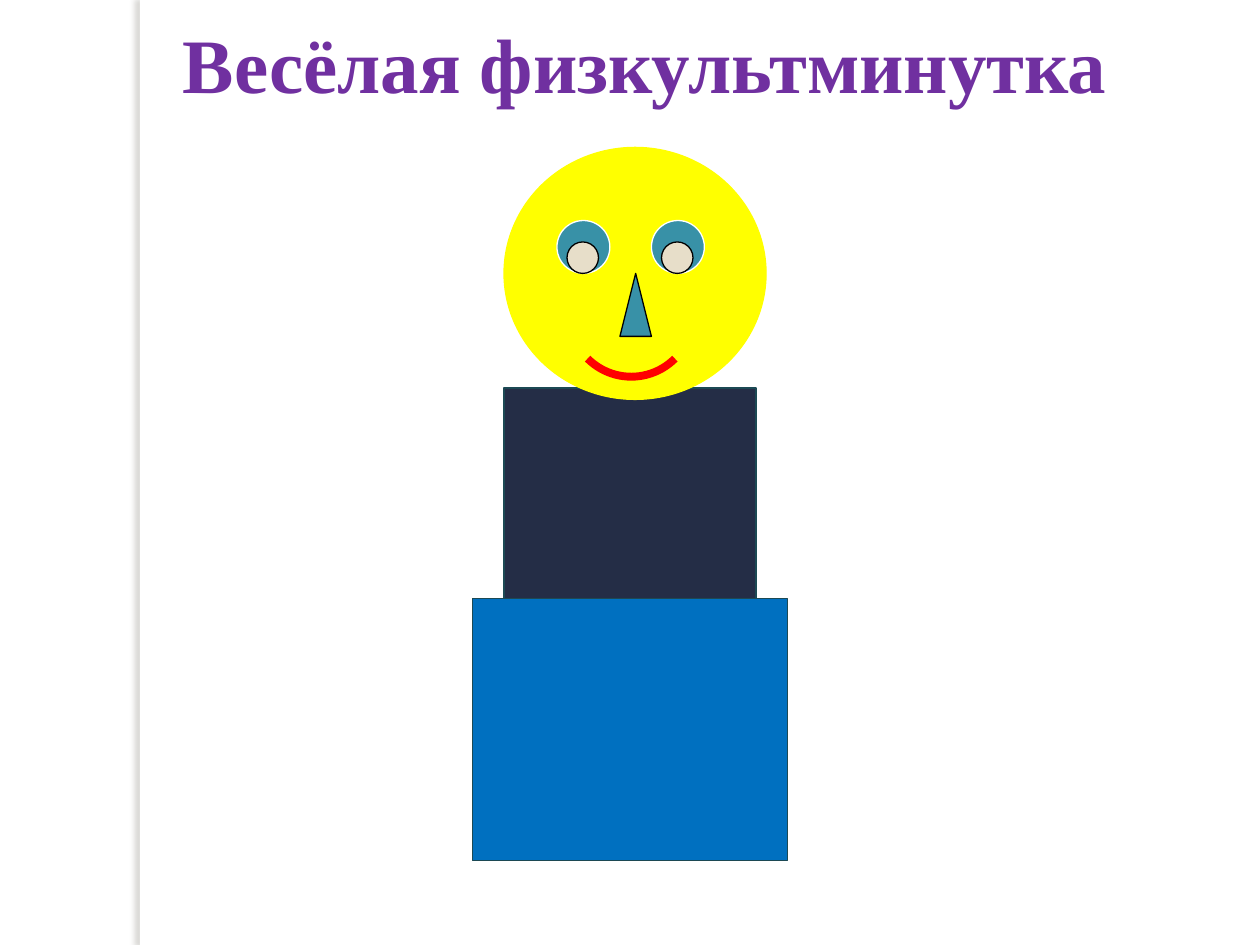
from lxml.etree import SubElement
from pptx import Presentation
from pptx.dml.color import RGBColor
from pptx.enum.shapes import MSO_SHAPE
from pptx.enum.text import MSO_ANCHOR, PP_ALIGN
from pptx.oxml.ns import qn
from pptx.util import Inches, Pt


def paint(color, value):
    color.rgb = RGBColor.from_string(value)


class Board:
    """Holds the style and the current slide."""
    font = "Times New Roman"
    edge = "1C4954"
    teal = "3891A7"
    black = "000000"

    def __init__(self, deck):
        self.slide = deck.slides.add_slide(deck.slide_layouts[5])

    def title(self, text, left, top, width, height):
        box = self.slide.shapes.title
        box.left, box.top = Inches(left), Inches(top)
        box.width, box.height = Inches(width), Inches(height)
        frame = box.text_frame
        frame.text = text
        frame.word_wrap = True
        frame.vertical_anchor = MSO_ANCHOR.TOP
        frame.margin_top = Inches(0.13)
        frame.margin_bottom = 0
        para = frame.paragraphs[0]
        para.alignment = PP_ALIGN.CENTER
        para.space_before = Pt(0)
        para.font.name, para.font.size, para.font.bold = self.font, Pt(44), True
        paint(para.font.color, "7030A0")

    def shape(self, kind, left, top, width, height, fill=None, line=None, weight=0.75):
        item = self.slide.shapes.add_shape(
            kind, Inches(left), Inches(top), Inches(width), Inches(height))
        item.shadow.inherit = False
        if fill:
            item.fill.solid()
            paint(item.fill.fore_color, fill)
        else:
            item.fill.background()
        if line:
            paint(item.line.color, line)
            item.line.width = Pt(weight)
        else:
            item.line.fill.background()
        return item

    def strip(self, left, width, height):
        """Draw a white upright band with a soft shadow on its left."""
        band = self.shape(MSO_SHAPE.RECTANGLE, left, 0, width, height, "FFFFFF")
        effects = band.element.spPr.find(qn("a:effectLst"))
        shade = SubElement(effects, qn("a:outerShdw"), blurRad=str(Pt(3)),
                           dist=str(Pt(3)), dir="10800000", rotWithShape="0")
        color = SubElement(shade, qn("a:srgbClr"), val="736F63")
        SubElement(color, qn("a:alpha"), val="25000")

    def smile(self, x, y, radius):
        """Draw the bottom quarter of a circle centred on x, y."""
        arc = self.shape(MSO_SHAPE.ARC, x - radius, y - radius,
                         2 * radius, 2 * radius, line="FF0000", weight=4.5)
        # An angle is stored in 60000ths of a degree, an adjustment in 100000ths
        arc.adjustments[0] = 45 * 0.6
        arc.adjustments[1] = 135 * 0.6

    def eyes(self, lefts, top):
        for left in lefts:
            self.shape(MSO_SHAPE.OVAL, left, top, 0.42, 0.42, self.teal, "FFFFFF")
        for left in lefts:
            self.shape(MSO_SHAPE.OVAL, left + 0.08, top + 0.17, 0.25, 0.25,
                       "E7DEC9", self.black)


def main():
    deck = Presentation()
    deck.slide_width, deck.slide_height = Inches(10), Inches(7.5)
    board = Board(deck)
    board.strip(1.11, 0.08, 7.5)
    board.shape(MSO_SHAPE.RECTANGLE, 3.75, 4.75, 2.5, 2.08, "0070C0", board.edge)
    board.shape(MSO_SHAPE.RECTANGLE, 4, 3.08, 2, 1.67, "242D46", board.edge)
    board.shape(MSO_SHAPE.OVAL, 4, 1.17, 2.08, 2, "FFFF00", "FFFF00")
    board.eyes((4.42, 5.17), 1.75)
    board.shape(MSO_SHAPE.ISOSCELES_TRIANGLE, 4.92, 2.17, 0.25, 0.5,
                board.teal, board.black)
    board.smile(5.01, 2.5, 0.49)
    board.title("Весёлая физкультминутка", 1.33, 0, 7.58, 0.84)
    deck.save("out.pptx")


if __name__ == "__main__":
    main()
